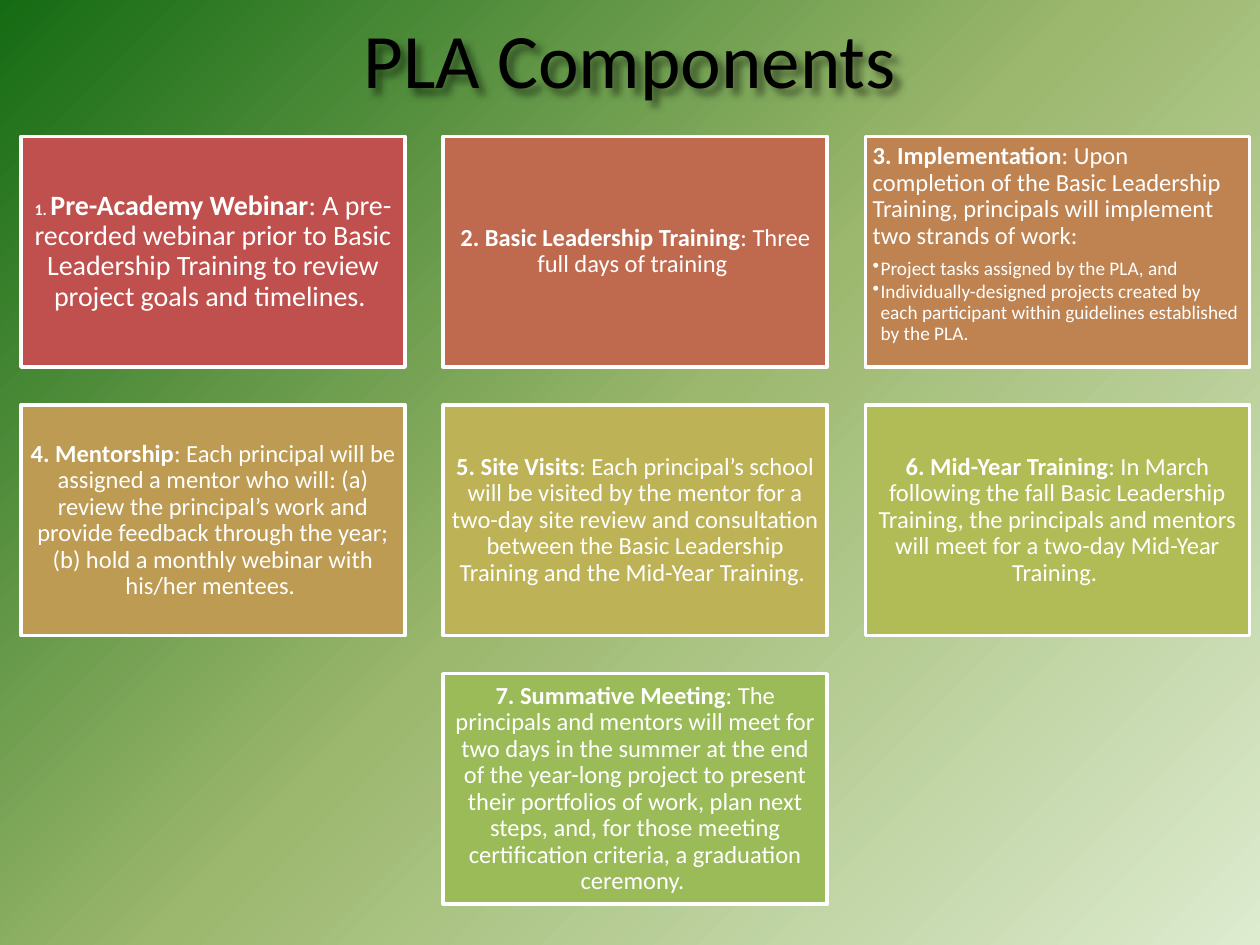
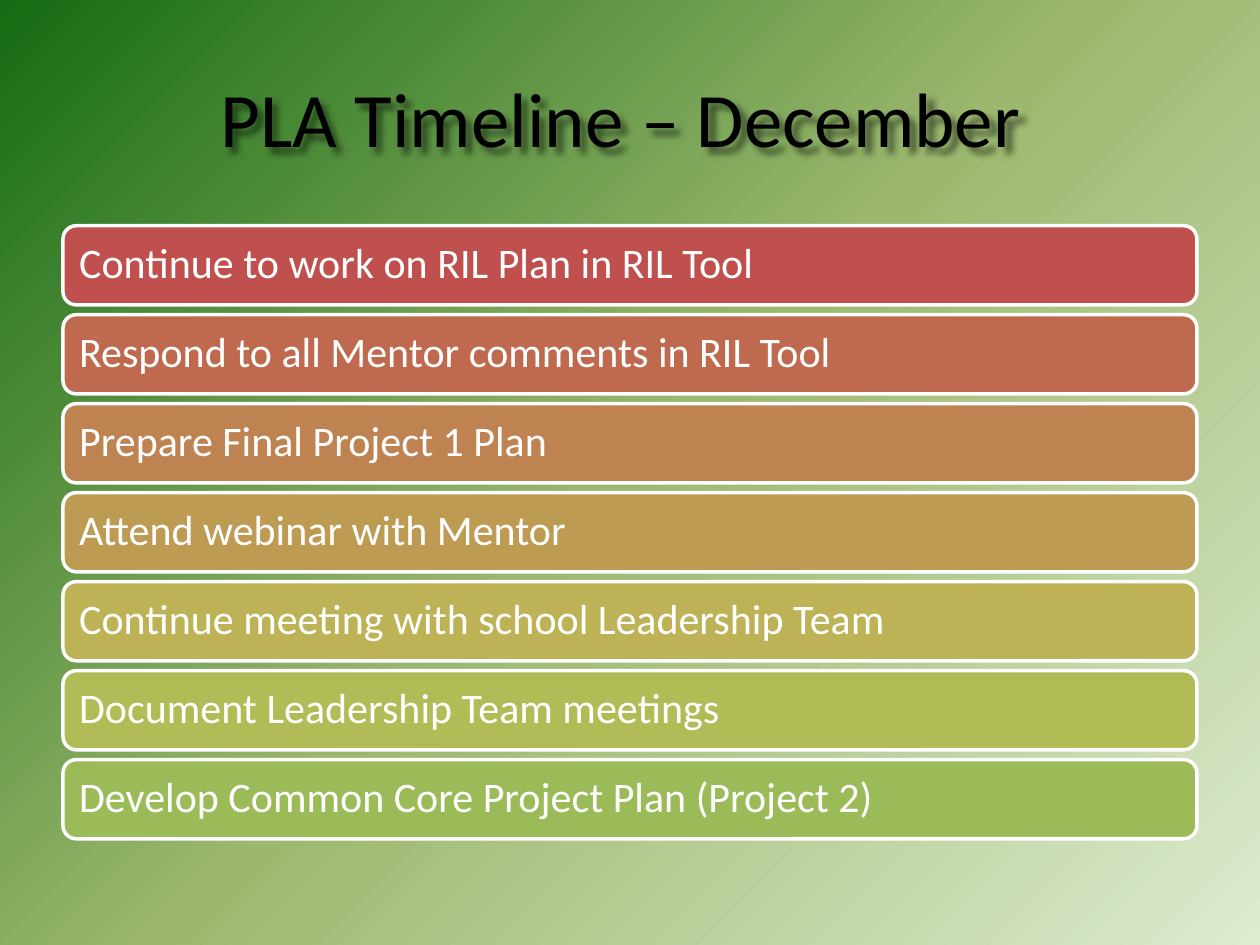
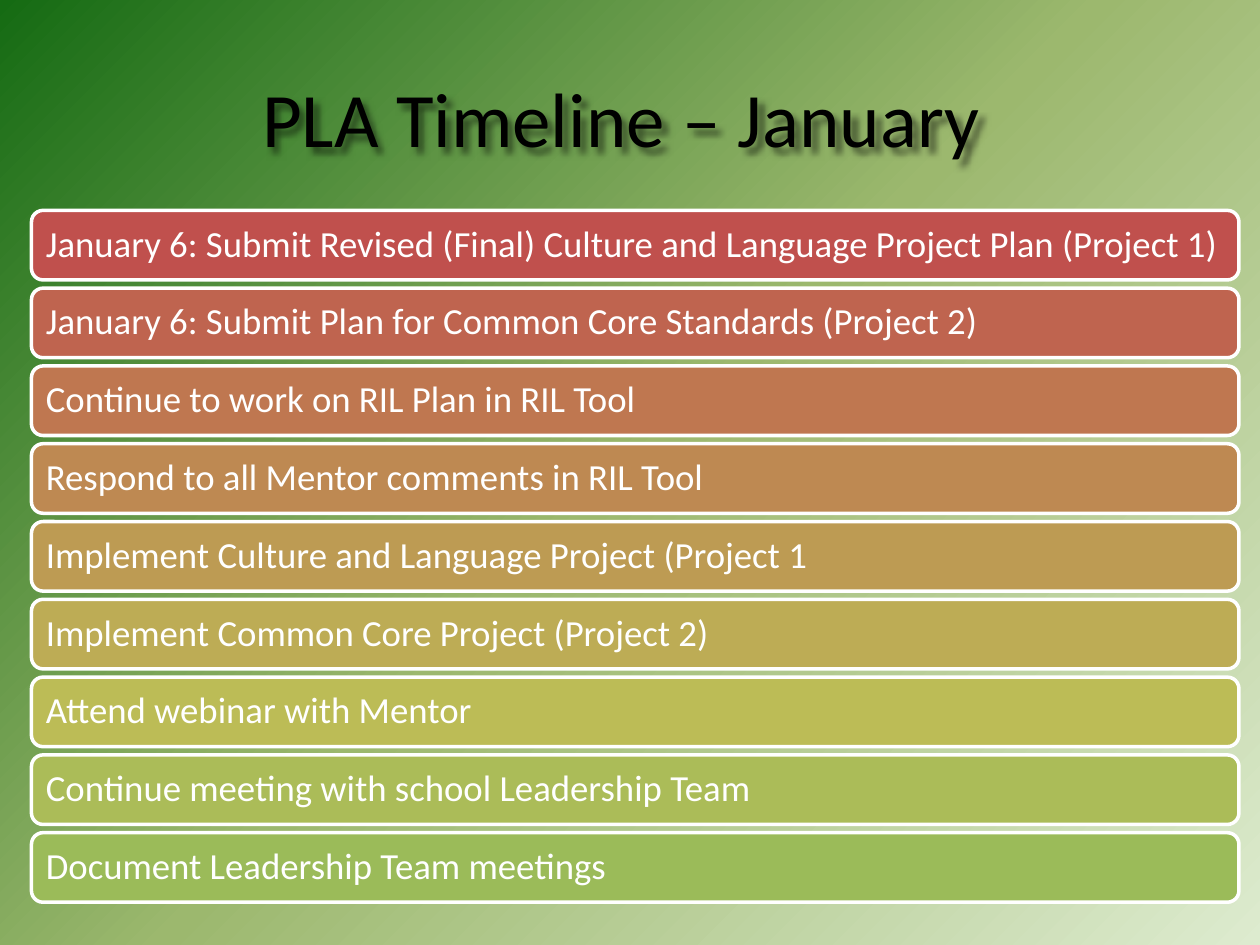
import colorsys

from lxml import etree
from pptx import Presentation
from pptx.dml.color import RGBColor
from pptx.enum import shapes, text
from pptx.oxml import parse_xml
from pptx.oxml.ns import nsdecls, qn
from pptx.util import Pt

FONT = "Calibri"
WHITE = RGBColor(0xFF, 0xFF, 0xFF)
BLACK = RGBColor(0x00, 0x00, 0x00)
FIRST_FILL = RGBColor(0xC0, 0x50, 0x4D)
LAST_FILL = RGBColor(0x9B, 0xBB, 0x59)
BACKGROUND_STOPS = [
    (0, RGBColor(0xDD, 0xEB, 0xCF)),
    (50, RGBColor(0x9C, 0xB8, 0x6E)),
    (100, RGBColor(0x15, 0x6B, 0x13)),
]

SLIDE_WIDTH, SLIDE_HEIGHT = 720, 540
TITLE_LEFT, TITLE_WIDTH, TITLE_HEIGHT = 36, 648, 90
TITLE_SIZE = 44

# Each card: number, number size, name, text, text size, bullets
COMPONENTS = {
    "title": "PLA Components",
    "title_top": -12,
    "cards": [
        ("1. ", 9, "Pre-Academy Webinar",
         ": A pre-recorded webinar prior to Basic Leadership Training to review "
         "project goals and timelines. ", 16, []),
        ("2. ", 14, "Basic Leadership Training",
         ": Three full days of training ", 14, []),
        ("3. ", 14, "Implementation",
         ": Upon completion of the Basic Leadership Training, principals will "
         "implement two strands of work:", 14,
         ["Project tasks assigned by the PLA, and",
          "Individually-designed projects created by each participant within "
          "guidelines established by the PLA."]),
        ("4. ", 14, "Mentorship",
         ": Each principal will be assigned a mentor who will: (a) review the "
         "principal’s work and provide feedback through the year; (b) hold a "
         "monthly webinar with his/her mentees. ", 14, []),
        ("5. ", 14, "Site Visits",
         ": Each principal’s school will be visited by the mentor for a two-day "
         "site review and consultation between the Basic Leadership Training and "
         "the Mid-Year Training. ", 14, []),
        ("6. ", 14, "Mid-Year Training",
         ": In March following the fall Basic Leadership Training, the principals "
         "and mentors will meet for a two-day Mid-Year Training. ", 14, []),
        ("7. ", 14, "Summative Meeting",
         ": The principals and mentors will meet for two days in the summer at the "
         "end of the year-long project to present their portfolios of work, plan "
         "next steps, and, for those meeting certification criteria, a graduation "
         "ceremony. ", 14, []),
    ],
}
CARD_LEFT, CARD_TOP, CARD_WIDTH, CARD_HEIGHT = 12, 78, 219.5, 131.75
CARD_GAP, CARD_COLUMNS = 21.75, 3
BULLET_SIZE, BULLET_INDENT = 11, 4.5

TIMELINES = [
    {
        "title": "PLA Timeline – December ",
        "left": 36, "top": 129, "width": 648, "height": 45.25, "gap": 5.6, "size": 24,
        "tasks": [
            "Continue to work on RIL Plan in RIL Tool",
            "Respond to all Mentor comments in RIL Tool",
            "Prepare Final Project 1 Plan",
            "Attend webinar with Mentor",
            "Continue meeting with school Leadership Team",
            "Document Leadership Team meetings",
            "Develop Common Core Project Plan (Project 2)",
        ],
    },
    {
        "title": "PLA Timeline – January ",
        "left": 18, "top": 120.25, "width": 690, "height": 39.75, "gap": 4.7, "size": 21,
        "tasks": [
            "January 6: Submit Revised (Final) Culture and Language Project Plan (Project 1)",
            "January 6: Submit Plan for Common Core Standards (Project 2)",
            "Continue to work on RIL Plan in RIL Tool",
            "Respond to all Mentor comments in RIL Tool",
            "Implement Culture and Language Project (Project 1",
            "Implement Common Core Project (Project 2)",
            "Attend webinar with Mentor",
            "Continue meeting with school Leadership Team",
            "Document Leadership Team meetings",
        ],
    },
]
TIMELINE_TITLE_TOP = 21.6


def set_all(target, values):
    for name, value in values.items():
        setattr(target, name, value)


def fill_steps(count):
    """Return count colours from FIRST_FILL to LAST_FILL, evenly spaced in hue."""
    start, end = (colorsys.rgb_to_hls(*(part / 255 for part in fill))
                  for fill in (FIRST_FILL, LAST_FILL))
    steps = []
    for index in range(count):
        share = index / (count - 1)
        mixed = [a + (b - a) * share for a, b in zip(start, end)]
        steps.append(RGBColor(*(round(part * 255) for part in colorsys.hls_to_rgb(*mixed))))
    return steps


def set_background(master):
    stops = "".join(
        f'<a:gs pos="{place * 1000}"><a:srgbClr val="{color}"/></a:gs>'
        for place, color in BACKGROUND_STOPS)
    gradient = parse_xml(
        f'<a:gradFill {nsdecls("a")} rotWithShape="1"><a:gsLst>{stops}</a:gsLst>'
        '<a:path path="circle"><a:fillToRect l="100000" t="100000"/></a:path>'
        '<a:tileRect r="-100000" b="-100000"/></a:gradFill>')
    master.background.fill.gradient()
    default = next(master.element.iter(qn("a:gradFill")))
    default.getparent().replace(default, gradient)


def add_titled_page(deck, title, top):
    page = deck.slides.add_slide(deck.slide_layouts[5])
    box = page.shapes.title
    set_all(box, {"left": Pt(TITLE_LEFT), "top": Pt(top),
                  "width": Pt(TITLE_WIDTH), "height": Pt(TITLE_HEIGHT)})
    box.text_frame.vertical_anchor = text.MSO_ANCHOR.MIDDLE
    para = box.text_frame.paragraphs[0]
    para.alignment = text.PP_ALIGN.CENTER
    add_span(para, title, TITLE_SIZE, color=BLACK)
    box.element.spPr.append(parse_xml(
        f'<a:effectLst {nsdecls("a")}><a:outerShdw blurRad="50800" dist="50800" '
        'dir="2700000" algn="tl" rotWithShape="0"><a:srgbClr val="000000">'
        '<a:alpha val="50000"/></a:srgbClr></a:outerShdw></a:effectLst>'))
    return page


def add_span(para, words, size, bold=False, color=WHITE):
    span = para.add_run()
    span.text = words
    set_all(span.font, {"name": FONT, "size": Pt(size), "bold": bold})
    span.font.color.rgb = color


def add_panel(page, kind, place, fill, inset):
    """Add a white-edged shape at place (left, top, width, height)."""
    box = page.shapes.add_shape(kind, *(Pt(round(length, 2)) for length in place))
    box.shadow.inherit = False
    box.fill.solid()
    box.fill.fore_color.rgb = fill
    box.line.color.rgb = WHITE
    box.line.width = Pt(2)
    frame = box.text_frame
    set_all(frame, {"word_wrap": True, "vertical_anchor": text.MSO_ANCHOR.MIDDLE})
    set_all(frame, {f"margin_{side}": Pt(round(inset, 2))
                    for side in ("left", "top", "right", "bottom")})
    return frame


def format_para(para, alignment, space_after):
    set_all(para, {"alignment": alignment, "line_spacing": 0.9,
                   "space_after": Pt(round(space_after, 2))})


def add_bullet(frame, words):
    para = frame.add_paragraph()
    para.level = 1
    format_para(para, text.PP_ALIGN.LEFT, 0.15 * BULLET_SIZE)
    add_span(para, words, BULLET_SIZE)
    props = para._p.get_or_add_pPr()
    props.set("marL", str(Pt(BULLET_INDENT)))
    props.set("indent", str(-Pt(BULLET_INDENT)))
    etree.SubElement(props, qn("a:buChar")).set("char", "•")


def add_components_page(deck):
    page = add_titled_page(deck, COMPONENTS["title"], COMPONENTS["title_top"])
    cards = COMPONENTS["cards"]
    for index, (card, fill) in enumerate(zip(cards, fill_steps(len(cards)))):
        number, number_size, name, words, size, bullets = card
        row, column = divmod(index, CARD_COLUMNS)
        in_row = min(CARD_COLUMNS, len(cards) - row * CARD_COLUMNS)
        column += (CARD_COLUMNS - in_row) / 2
        place = (CARD_LEFT + column * (CARD_WIDTH + CARD_GAP),
                 CARD_TOP + row * (CARD_HEIGHT + CARD_GAP), CARD_WIDTH, CARD_HEIGHT)
        frame = add_panel(page, shapes.MSO_SHAPE.RECTANGLE, place, fill, 0.3 * number_size)
        para = frame.paragraphs[0]
        format_para(para, text.PP_ALIGN.LEFT if bullets else text.PP_ALIGN.CENTER, 0.35 * size)
        add_span(para, number, number_size, bold=True)
        add_span(para, name, size, bold=True)
        add_span(para, words, size)
        if bullets:
            frame.vertical_anchor = text.MSO_ANCHOR.TOP
        for bullet in bullets:
            add_bullet(frame, bullet)


def add_timeline_page(deck, timeline):
    page = add_titled_page(deck, timeline["title"], TIMELINE_TITLE_TOP)
    tasks, size, height = timeline["tasks"], timeline["size"], timeline["height"]
    for index, (task, fill) in enumerate(zip(tasks, fill_steps(len(tasks)))):
        top = timeline["top"] + index * (height + timeline["gap"])
        place = (timeline["left"], top, timeline["width"], height)
        frame = add_panel(page, shapes.MSO_SHAPE.ROUNDED_RECTANGLE, place, fill, 0.3 * size)
        para = frame.paragraphs[0]
        format_para(para, text.PP_ALIGN.LEFT, 0.35 * size)
        add_span(para, task, size)


def main():
    deck = Presentation()
    set_all(deck, {"slide_width": Pt(SLIDE_WIDTH), "slide_height": Pt(SLIDE_HEIGHT)})
    set_background(deck.slide_master)
    add_components_page(deck)
    for timeline in TIMELINES:
        add_timeline_page(deck, timeline)
    deck.save("out.pptx")


if __name__ == "__main__":
    main()
